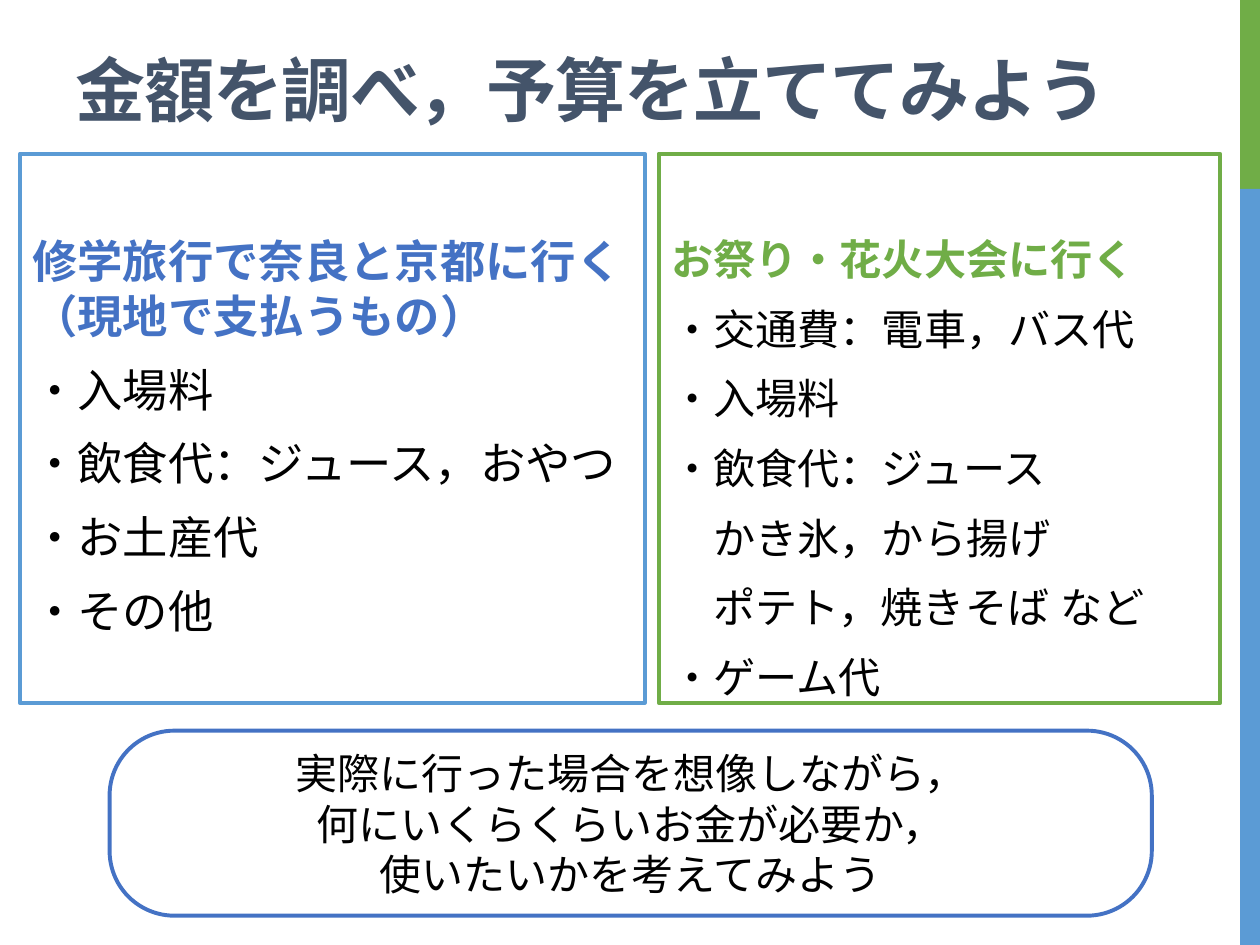
from pptx import Presentation
from pptx import util as u
from pptx.dml.color import RGBColor
from pptx.enum import shapes, text
from pptx.oxml.ns import qn
from lxml import etree

SANS = "Noto Sans CJK JP"
BLUE, GREEN, ROYAL = "5B9BD5", "70AD47", "4472C4"


def rgb(value):
    """Turn a hex string into a colour."""
    return RGBColor.from_string(value)


def add_box(s, at, fill="FFFFFF", line=None, kind=shapes.MSO_SHAPE.RECTANGLE):
    """Add a filled shape at left, top, width, height in centimetres."""
    sp = s.shapes.add_shape(kind, *map(u.Cm, at))
    sp.shadow.inherit = False
    sp.fill.solid()
    sp.fill.fore_color.rgb = rgb(fill)
    if line:
        sp.line.color.rgb = rgb(line)
        sp.line.width = u.Pt(2.25)
    else:
        sp.line.fill.background()
    return sp


def set_frame(sp, anchor, top=0.13, sides=0.25, bottom=0.13):
    """Prepare a wrapped text frame with its insets in centimetres."""
    tf = sp.text_frame
    tf.word_wrap = True
    tf.vertical_anchor = anchor
    tf.margin_left = tf.margin_right = u.Cm(sides)
    tf.margin_top, tf.margin_bottom = u.Cm(top), u.Cm(bottom)
    return tf


def write(tf, words, size, font=SANS, color="000000", bold=False, pitch=None,
          after=0, align=text.PP_ALIGN.LEFT, tracking=0):
    """Write one paragraph, using the empty first one when it is free."""
    p = tf.paragraphs[0] if not tf.text else tf.add_paragraph()
    p.text = words
    p.alignment = align
    p.space_before, p.space_after = u.Pt(0), u.Pt(after)
    if pitch:
        p.line_spacing = u.Pt(pitch)
    for r in p.runs:
        r.font.name, r.font.size, r.font.bold = font, u.Pt(size), bold
        r.font.color.rgb = rgb(color)
        rPr = r.font._element
        etree.SubElement(rPr, qn("a:ea")).set("typeface", font)
        if tracking:
            rPr.set("spc", str(tracking))


def add_title(s, words):
    """Add the slide title."""
    sp = s.shapes.add_textbox(u.Cm(1.27), u.Cm(0.43), u.Cm(22.94), u.Cm(2.69))
    tf = set_frame(sp, text.MSO_ANCHOR.MIDDLE)
    write(tf, words, 40, color="44546A", bold=True, tracking=-60)


def add_budget(s, left, width, line, heading, color, items, size, pitch):
    """Add an outlined panel with a heading and its list of costs."""
    sp = add_box(s, (left, 3.1, width, 11.07), line=line)
    tf = set_frame(sp, text.MSO_ANCHOR.TOP, top=1.6)
    style = dict(size=size, font="Lato", pitch=pitch, after=10.8)
    write(tf, heading, color=color, bold=True, **style)
    for item in items:
        write(tf, item, **style)


def add_prompt(s, lines):
    """Add the rounded prompt at the foot of the slide."""
    sp = add_box(s, (2.21, 14.73, 21.01, 3.73), line=ROYAL,
                 kind=shapes.MSO_SHAPE.ROUNDED_RECTANGLE)
    sp.adjustments[0] = 0.35
    tf = set_frame(sp, text.MSO_ANCHOR.MIDDLE, 0, 0, 0)
    for line in lines:
        write(tf, line, 24, pitch=29, align=text.PP_ALIGN.CENTER)


def main():
    """Build the slide and save it."""
    prs = Presentation()
    prs.slide_width, prs.slide_height = u.Cm(25.4), u.Cm(19.05)
    s = prs.slides.add_slide(prs.slide_layouts[6])
    add_box(s, (25, 0, 0.4, 3.81), GREEN)
    add_box(s, (25, 3.81, 0.4, 15.24), BLUE)
    add_title(s, "金額を調べ，予算を立ててみよう")
    add_budget(s, 13.28, 11.32, GREEN, "お祭り・花火大会に行く", GREEN,
               ["・交通費：電車，バス代", "・入場料", "・飲食代：ジュース",
                "　かき氷，から揚げ", "　ポテト，焼きそば など", "・ゲーム代"],
               24.1, 29)
    add_budget(s, 0.4, 12.6, BLUE,
               "修学旅行で奈良と京都に行く\v（現地で支払うもの）", ROYAL,
               ["・入場料", "・飲食代：ジュース，おやつ", "・お土産代", "・その他"],
               25.9, 31.3)
    add_prompt(s, ["実際に行った場合を想像しながら，",
                   "何にいくらくらいお金が必要か，",
                   "使いたいかを考えてみよう"])
    prs.save("out.pptx")


if __name__ == "__main__":
    main()
